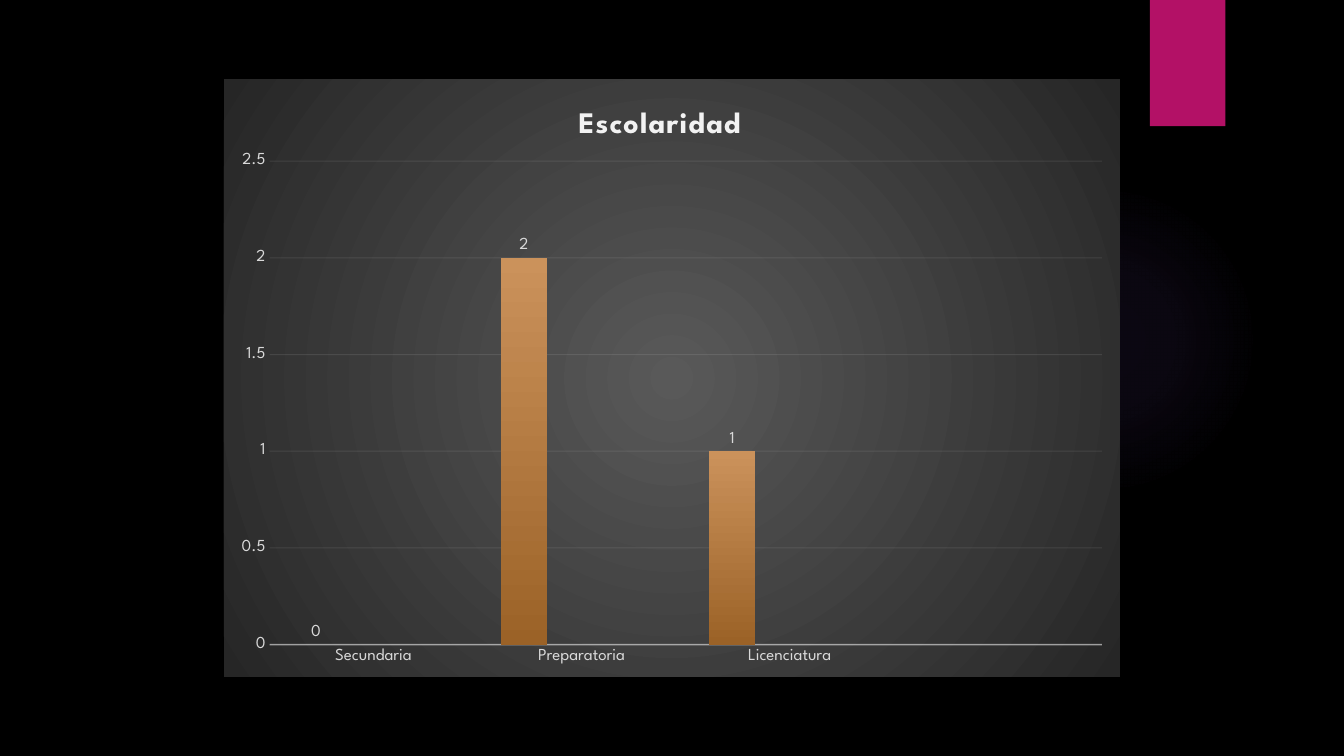
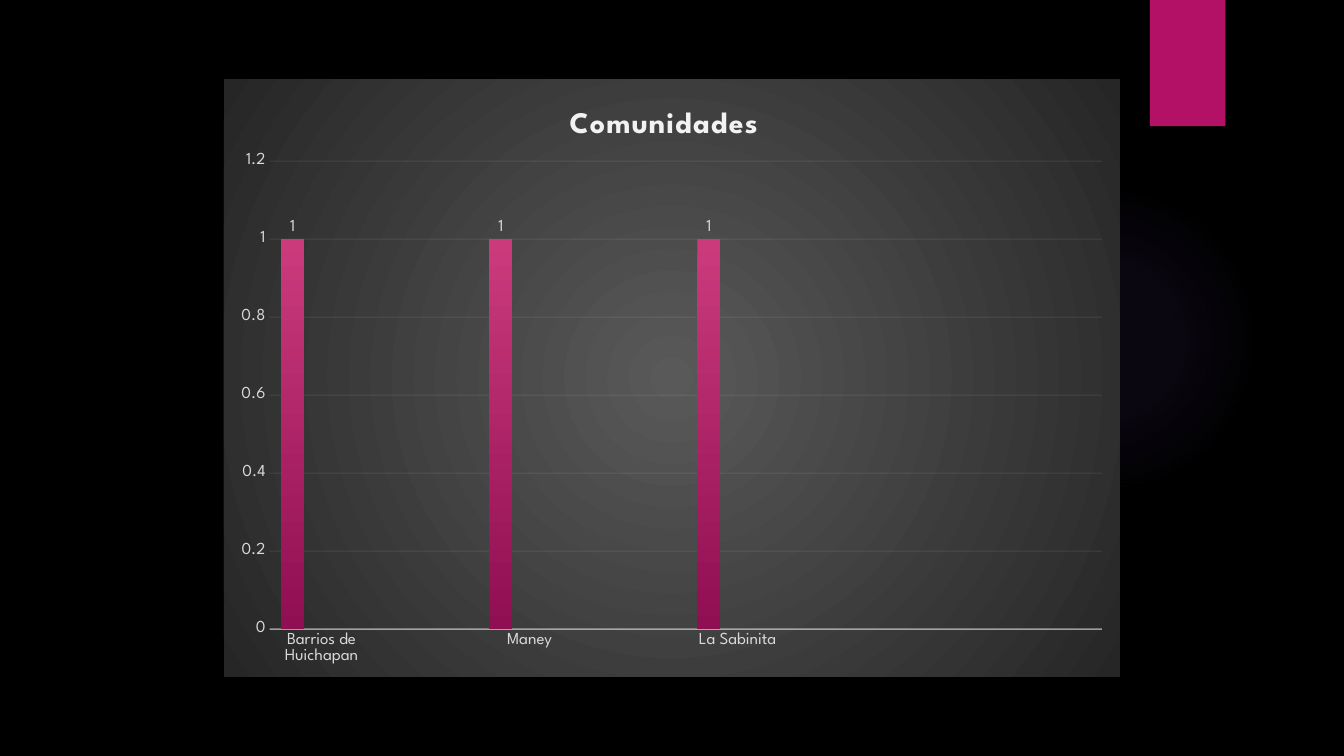
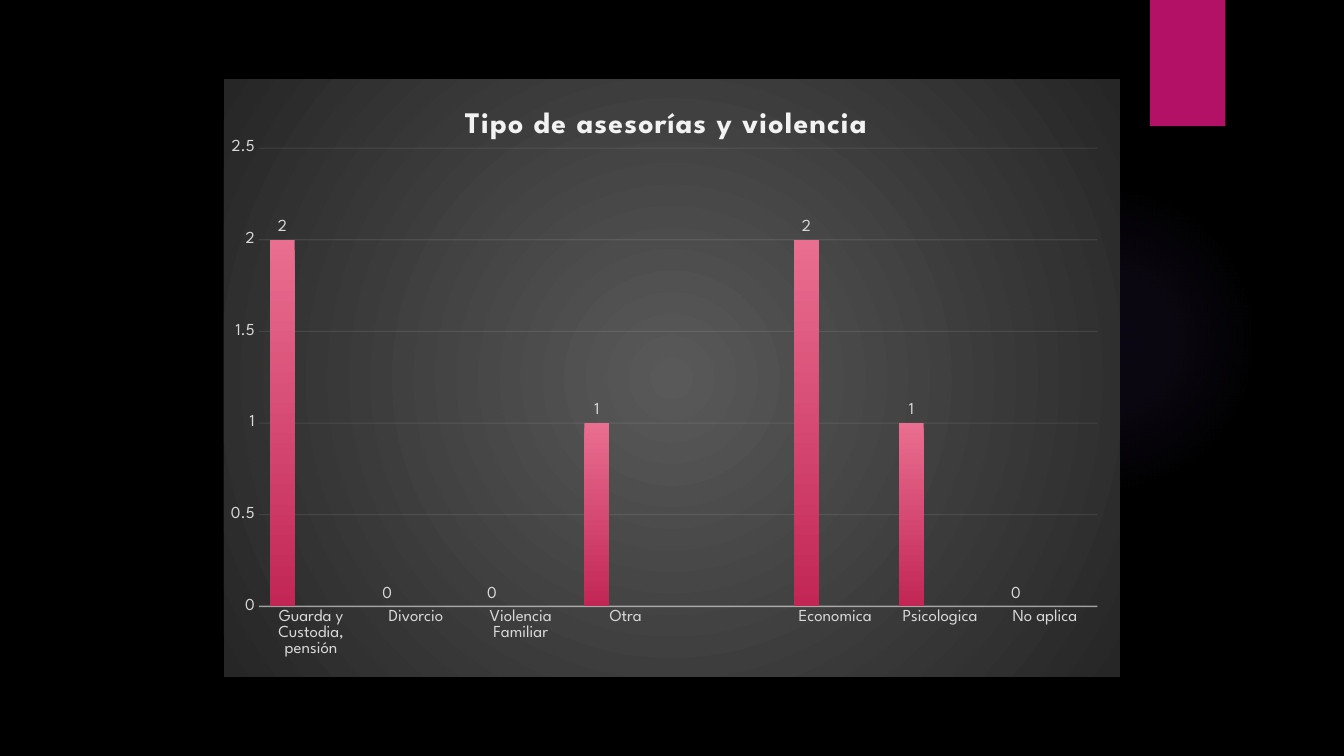
from dataclasses import dataclass

from lxml.etree import SubElement
from pptx import Presentation
from pptx.chart.data import CategoryChartData
from pptx.dml.color import RGBColor
from pptx.enum.chart import XL_CHART_TYPE as ChartType
from pptx.enum.chart import XL_LABEL_POSITION as LabelPosition
from pptx.enum.chart import XL_TICK_MARK as TickMark
from pptx.enum.shapes import MSO_SHAPE as Shape
from pptx.oxml import parse_xml
from pptx.oxml.ns import nsdecls, qn
from pptx.util import Cm, Pt

# Shared style
FONT = "League Spartan"
BLACK = "000000"
MAGENTA = "B31166"
GLOW = "9B6BF2"
PALE = "F2F2F2"
LABEL = "D9D9D9"
PANEL_STOPS = [(0, "595959", 100), (100, "262626", 100)]
GLOW_STOPS = [(0, GLOW, 7), (36, GLOW, 6), (69, GLOW, 0)]
TITLE_TOP = 0.04


@dataclass
class ColumnChart:
    title: str
    title_left: float
    categories: list
    values: list
    gradients: list  # light and dark end for each series
    top_value: float
    step: float
    plot_area: tuple  # left, top, width, height as shares of the chart
    gap: int = 100
    overlap: int = -24


CHARTS = [
    ColumnChart(
        "Escolaridad", 0.39,
        ["Secundaria", "Preparatoria", "Licenciatura", ""],
        [0, 2, 1, None],
        [("CB925B", "9B6227"), ("EEAD6D", "C97721"), ("F9E6DA", "DA966D")],
        2.5, 0.5, (0.051, 0.137, 0.929, 0.809)),
    ColumnChart(
        "Comunidades", 0.38,
        ["Barrios de Huichapan", "", "Maney", "", "La Sabinita", "", "", ""],
        [1, None, 1, None, 1, None, None, None],
        [("CB3B7C", "900E52"), ("E96E90", "C22655"), ("EA856D", "C24525")],
        1.2, 0.2, (0.051, 0.137, 0.929, 0.783)),
    ColumnChart(
        "Tipo de asesorías y violencia", 0.263,
        ["Guarda y Custodia, pensión", "Divorcio", "Violencia Familiar",
         "Otra", "", "Economica", "Psicologica", "No aplica"],
        [2, 0, 0, 1, None, 2, 1, 0],
        [("E96E90", "C22655"), ("EEAD6D", "C97721"), ("DD6AD9", "AE2EAA")],
        2.5, 0.5, (0.039, 0.115, 0.936, 0.767), gap=90, overlap=-16),
]


def color(value):
    return RGBColor.from_string(value)


def style_font(font, size, value, bold=False):
    font.name = FONT
    font.size = Pt(size)
    font.bold = bold
    font.color.rgb = color(value)


def radial_fill(stops):
    """Gradient from the centre out; stops are position, colour, opacity."""
    marks = "".join(
        f'<a:gs pos="{place * 1000}"><a:srgbClr val="{value}">'
        f'<a:alpha val="{opacity * 1000}"/></a:srgbClr></a:gs>'
        for place, value, opacity in stops)
    return (f'<a:gradFill {nsdecls("a")} rotWithShape="1"><a:gsLst>{marks}</a:gsLst>'
            '<a:path path="circle"><a:fillToRect l="50000" t="50000" '
            'r="50000" b="50000"/></a:path></a:gradFill>')


def add_plain_shape(page, kind, left, top, width, height):
    shape = page.shapes.add_shape(kind, Cm(left), Cm(top), Cm(width), Cm(height))
    shape.shadow.inherit = False
    shape.line.fill.background()
    return shape


def add_backdrop(page):
    glow = add_plain_shape(page, Shape.OVAL, 23.9, 4.65, 7.82, 7.82)
    outline = glow._element.spPr.find(qn("a:prstGeom"))
    outline.addnext(parse_xml(radial_fill(GLOW_STOPS)))
    ribbon = add_plain_shape(page, Shape.RECTANGLE, 28.98, 0, 1.9, 3.18)
    ribbon.fill.solid()
    ribbon.fill.fore_color.rgb = color(MAGENTA)


def set_layout(parent, **settings):
    """Fix the place of a chart part."""
    layout = parent.find(qn("c:layout"))
    if layout is None:
        layout = parse_xml(f'<c:layout {nsdecls("c")}/>')
        parent.insert(0, layout)
    manual = SubElement(layout, qn("c:manualLayout"))
    for name, value in settings.items():
        SubElement(manual, qn(f"c:{name}")).set("val", str(value))


def style_line(line, width, opacity):
    line.width = Pt(width)
    line.color.rgb = color(PALE)
    tint = line._get_or_add_ln().find(".//" + qn("a:srgbClr"))
    SubElement(tint, qn("a:alpha")).set("val", str(opacity * 1000))


def style_title(chart, content):
    chart.has_title = True
    title = chart.chart_title
    span = title.text_frame.paragraphs[0].add_run()
    span.text = content.title
    style_font(span.font, 21.3, PALE, bold=True)
    span._r.get_or_add_rPr().set("spc", "100")
    set_layout(title._element, xMode="edge", yMode="edge",
               x=content.title_left, y=TITLE_TOP)


def style_axes(chart, content):
    for axis in (chart.category_axis, chart.value_axis):
        axis.major_tick_mark = axis.minor_tick_mark = TickMark.NONE
        style_font(axis.tick_labels.font, 12, LABEL)
    chart.category_axis.has_major_gridlines = False
    style_line(chart.category_axis.format.line, 1, 54)
    scale = chart.value_axis
    scale.minimum_scale = 0
    scale.maximum_scale = content.top_value
    scale.major_unit = content.step
    scale.format.line.fill.background()
    scale.has_major_gridlines = True
    style_line(scale.major_gridlines.format.line, 0.75, 10)


def style_series(series, ends):
    fill = series.format.fill
    fill.gradient()
    fill.gradient_angle = 270
    for stop, value in zip(fill.gradient_stops, ends):
        stop.color.rgb = color(value)
    labels = series.data_labels
    labels.show_value = True
    labels.position = LabelPosition.OUTSIDE_END
    style_font(labels.font, 12, LABEL)


def add_column_chart(page, content):
    data = CategoryChartData()
    data.categories = content.categories
    empty = [None] * len(content.values)
    for number, values in enumerate((content.values, empty, empty), 1):
        data.add_series(f"Series {number}", values)
    chart = page.shapes.add_chart(
        ChartType.COLUMN_CLUSTERED, Cm(5.64), Cm(2), Cm(22.58), Cm(15.06), data).chart
    style_font(chart.font, 10, "FFFFFF")
    chart.has_legend = False
    style_title(chart, content)
    style_axes(chart, content)

    # Columns
    plot = chart.plots[0]
    plot.vary_by_categories = False
    plot.gap_width = content.gap
    plot.overlap = content.overlap
    for series, ends in zip(plot.series, content.gradients):
        style_series(series, ends)

    # Panel and plot area
    root = chart._chartSpace
    root.find(qn("c:chart")).addnext(parse_xml(
        f'<c:spPr {nsdecls("c", "a")}>{radial_fill(PANEL_STOPS)}'
        '<a:ln><a:noFill/></a:ln></c:spPr>'))
    left, top, width, height = content.plot_area
    set_layout(root.find(".//" + qn("c:plotArea")), layoutTarget="inner",
               xMode="edge", yMode="edge", x=left, y=top, w=width, h=height)


def main():
    deck = Presentation()
    deck.slide_width, deck.slide_height = Cm(33.87), Cm(19.05)
    backdrop = deck.slide_master.background.fill
    backdrop.solid()
    backdrop.fore_color.rgb = color(BLACK)
    for content in CHARTS:
        page = deck.slides.add_slide(deck.slide_layouts[6])
        add_backdrop(page)
        add_column_chart(page, content)
    deck.save("out.pptx")


if __name__ == "__main__":
    main()
